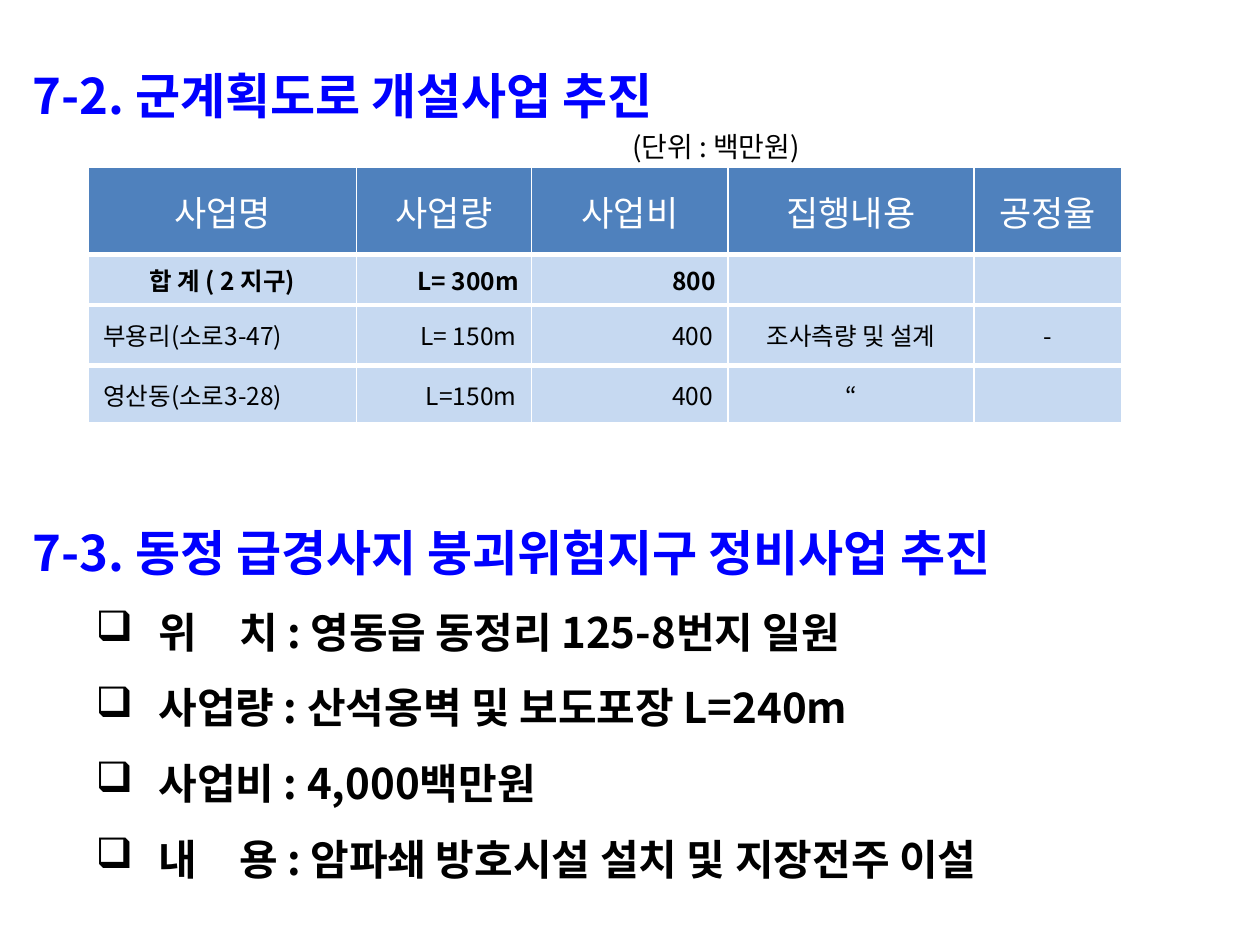
from dataclasses import dataclass, field

import lxml.etree
import pptx
import pptx.dml.color
import pptx.enum.text
import pptx.oxml
import pptx.oxml.ns
import pptx.util

Inches = pptx.util.Inches
Pt = pptx.util.Pt
Align = pptx.enum.text.PP_ALIGN
qn = pptx.oxml.ns.qn

FONT = "Noto Sans CJK KR"
COLORS = {
    "heading": "0000FF",
    "body": "000000",
    "white": "FFFFFF",
    "header_fill": "4F81BD",
    "row_fill": "C6D9F1",
}


@dataclass
class Line:
    text: str
    size: int
    color: str = "body"
    bold: bool = False
    bullet: str = ""
    indent: tuple[float, float] = (0, 0)
    formats: dict = field(default_factory=dict)


@dataclass
class RowStyle:
    height: float
    fill: str
    color: str
    size: int
    bold: bool
    side_margin: float
    top_border: int
    aligns: tuple


def rgb(name: str) -> pptx.dml.color.RGBColor:
    return pptx.dml.color.RGBColor.from_string(COLORS[name])


def apply_formats(target, formats: dict) -> None:
    for attribute, value in formats.items():
        setattr(target, attribute, value)


def write_line(paragraph, line: Line) -> None:
    apply_formats(paragraph, line.formats)
    properties = paragraph._p.get_or_add_pPr()
    margin, first = line.indent
    properties.set("marL", str(Inches(margin)))
    properties.set("indent", str(Inches(first)))
    if line.bullet:
        bullet_color = lxml.etree.SubElement(properties, qn("a:buClr"))
        lxml.etree.SubElement(bullet_color, qn("a:srgbClr"), val=COLORS[line.color])
        lxml.etree.SubElement(properties, qn("a:buChar"), char=line.bullet)
    if not line.text:
        paragraph._p.get_or_add_endParaRPr().set("sz", str(line.size * 100))
        return
    run = paragraph.add_run()
    run.text = line.text
    apply_formats(run.font, {"size": Pt(line.size), "bold": line.bold, "name": FONT})
    run.font.color.rgb = rgb(line.color)
    lxml.etree.SubElement(run._r.get_or_add_rPr(), qn("a:ea"), typeface=FONT)


def add_text(slide, box: tuple, lines: list[Line], wrap: bool) -> None:
    frame = slide.shapes.add_textbox(*map(Inches, box)).text_frame
    frame.word_wrap = wrap
    for index, line in enumerate(lines):
        paragraph = frame.add_paragraph() if index else frame.paragraphs[0]
        write_line(paragraph, line)


def add_borders(cell, widths: dict[str, int]) -> None:
    properties = cell._tc.get_or_add_tcPr()
    for side, width in widths.items():
        border = lxml.etree.SubElement(properties, qn(f"a:ln{side}"), w=str(Pt(width)))
        fill = lxml.etree.SubElement(border, qn("a:solidFill"))
        lxml.etree.SubElement(fill, qn("a:srgbClr"), val=COLORS["white"])


def fill_row(table, index: int, texts: tuple, style: RowStyle) -> None:
    table.rows[index].height = Inches(style.height)
    for cell, text, align in zip(table.rows[index].cells, texts, style.aligns):
        add_borders(cell, {"L": 1, "R": 1, "T": style.top_border, "B": 3})
        cell.fill.solid()
        cell.fill.fore_color.rgb = rgb(style.fill)
        apply_formats(cell, {
            "vertical_anchor": pptx.enum.text.MSO_ANCHOR.MIDDLE,
            "margin_left": Inches(style.side_margin),
            "margin_right": Inches(style.side_margin),
            "margin_top": Inches(0.05),
            "margin_bottom": Inches(0.05),
        })
        write_line(cell.text_frame.paragraphs[0],
                   Line(text, style.size, style.color, style.bold,
                        formats={"alignment": align}))


def add_project_table(slide) -> None:
    widths = (2.13, 1.39, 1.56, 1.95, 1.17)
    centred = (Align.CENTER,) * len(widths)
    total_aligns = (Align.CENTER, Align.RIGHT, Align.RIGHT, Align.CENTER, Align.CENTER)
    site_aligns = (Align.LEFT,) + total_aligns[1:]
    rows = [
        (("사업명", "사업량", "사업비", "집행내용", "공정율"),
         RowStyle(0.69, "header_fill", "white", 20, False, 0.1, 1, centred)),
        (("합 계 ( 2 지구)", "L= 300m", "800", "", ""),
         RowStyle(0.4, "row_fill", "body", 14, True, 0.1, 3, total_aligns)),
        (("부용리(소로3-47)", " L= 150m", "400", "조사측량 및 설계", "-"),
         RowStyle(0.48, "row_fill", "body", 14, False, 0.12, 3, site_aligns)),
        (("영산동(소로3-28)", " L=150m", "400", "“", ""),
         RowStyle(0.47, "row_fill", "body", 14, False, 0.12, 3, site_aligns)),
    ]
    table = slide.shapes.add_table(
        len(rows), len(widths), Inches(0.7), Inches(1.33),
        Inches(sum(widths)), Inches(sum(style.height for _, style in rows))).table
    apply_formats(table, {"first_row": False, "horz_banding": False})
    for column, width in zip(table.columns, widths):
        column.width = Inches(width)
    for index, (texts, style) in enumerate(rows):
        fill_row(table, index, texts, style)


def main() -> None:
    presentation = pptx.Presentation()
    apply_formats(presentation, {"slide_width": Inches(10), "slide_height": Inches(7.5)})
    slide = presentation.slides.add_slide(presentation.slide_layouts[6])

    add_text(slide, (0.16, 0.47, 9.14, 0.9), [
        Line("7-2. 군계획도로 개설사업 추진", 28, "heading", True,
             formats={"space_before": Pt(5.6)}),
        Line("(단위 : 백만원)", 16, indent=(4.76, 0),
             formats={"space_before": Pt(3.2)}),
    ], wrap=True)

    add_project_table(slide)

    details = (
        "위　치 : 영동읍 동정리 125-8번지 일원",
        "사업량 : 산석옹벽 및 보도포장 L=240m",
        "사업비 : 4,000백만원",
        "내　용 : 암파쇄 방호시설 설치 및 지장전주 이설",
    )
    add_text(slide, (0.16, 3.91, 9.61, 3.2), [
        Line("7-3. 동정 급경사지 붕괴위험지구 정비사업 추진", 28, "heading", True,
             indent=(0.58, -0.58), formats={"line_spacing": 1.4}),
        *(Line(detail, 24, bold=True, bullet="❑", indent=(1, -0.5),
               formats={"level": 1, "line_spacing": 1.5}) for detail in details),
    ], wrap=False)

    presentation.save("out.pptx")


if __name__ == "__main__":
    main()
